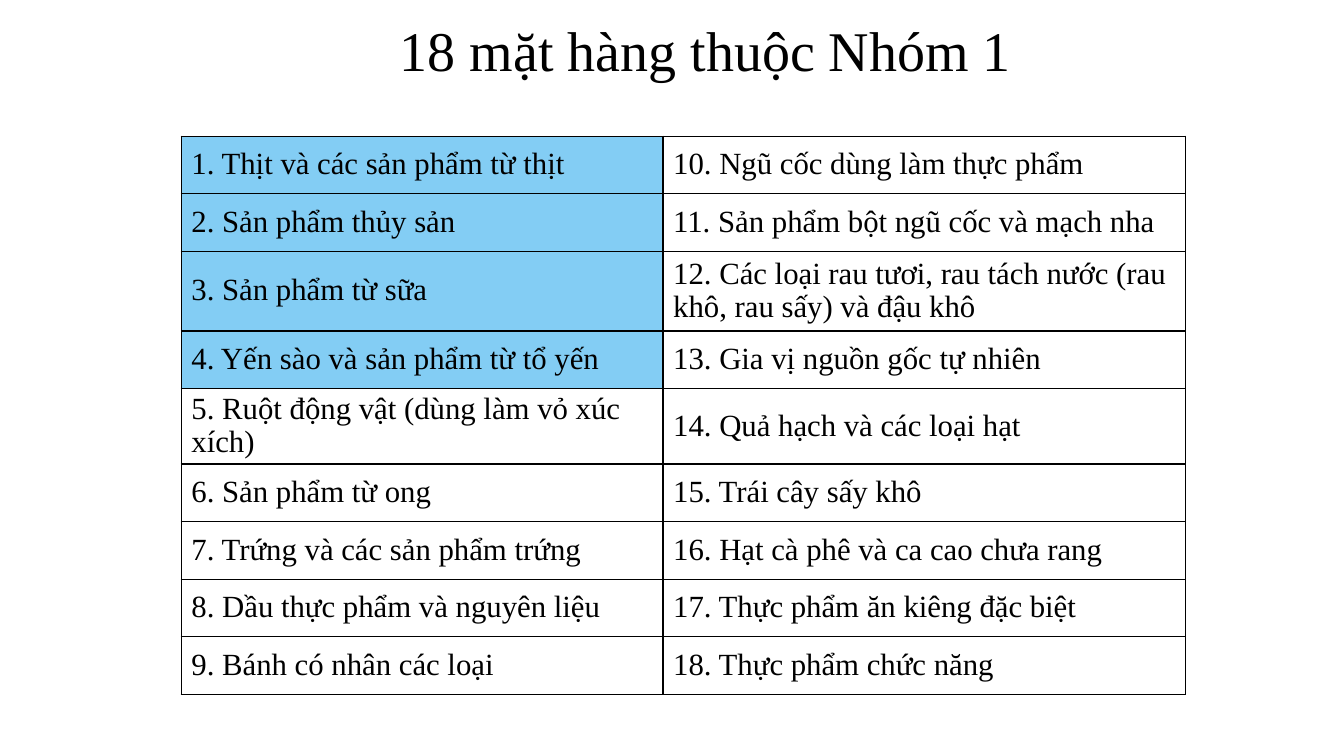
from pptx import Presentation
from pptx.dml.color import RGBColor
from pptx.enum.text import MSO_ANCHOR as Anchor, MSO_AUTO_SIZE as AutoSize, PP_ALIGN as Align
from pptx.oxml import parse_xml
from pptx.oxml.ns import nsdecls
from pptx.util import Cm, Pt

FONT = "Times New Roman"
BLACK, HIGHLIGHT = "000000", "83CDF4"
HIGHLIGHTED_ITEMS = 4
COLUMN_WIDTHS = [12.14, 13.16]
ROW_HEIGHTS = [1.45, 1.45, 2.01] + [1.45] * 6
ITEMS = [
    "Thịt và các sản phẩm từ thịt",
    "Sản phẩm thủy sản",
    "Sản phẩm từ sữa",
    "Yến sào và sản phẩm từ tổ yến",
    "Ruột động vật (dùng làm vỏ xúc xích)",
    "Sản phẩm từ ong",
    "Trứng và các sản phẩm trứng",
    "Dầu thực phẩm và nguyên liệu",
    "Bánh có nhân các loại",
    "Ngũ cốc dùng làm thực phẩm",
    "Sản phẩm bột ngũ cốc và mạch nha",
    "Các loại rau tươi, rau tách nước (rau khô, rau sấy) và đậu khô",
    "Gia vị nguồn gốc tự nhiên",
    "Quả hạch và các loại hạt",
    "Trái cây sấy khô",
    "Hạt cà phê và ca cao chưa rang",
    "Thực phẩm ăn kiêng đặc biệt",
    "Thực phẩm chức năng",
]


def color(hex_code):
    return RGBColor.from_string(hex_code)


def set_font(paragraph, size):
    paragraph.font.name = FONT
    paragraph.font.size = Pt(size)
    paragraph.font.color.rgb = color(BLACK)


def add_borders(cell):
    properties = cell._tc.get_or_add_tcPr()
    for side in ("lnL", "lnR", "lnT", "lnB"):
        properties.append(parse_xml(
            f'<a:{side} {nsdecls("a")} w="{Pt(1)}"><a:solidFill>'
            f'<a:srgbClr val="{BLACK}"/></a:solidFill></a:{side}>'))


def fill_cell(cell, number, item):
    add_borders(cell)
    if number <= HIGHLIGHTED_ITEMS:
        cell.fill.solid()
        cell.fill.fore_color.rgb = color(HIGHLIGHT)
    else:
        cell.fill.background()
    cell.vertical_anchor = Anchor.MIDDLE
    paragraph = cell.text_frame.paragraphs[0]
    paragraph.text = f"{number}. {item}"
    paragraph.line_spacing = 0.96
    set_font(paragraph, 22)


def place_title(slide, left, top, width, height):
    title = slide.shapes.title
    title.left, title.top, title.width, title.height = left, top, width, height
    frame = title.text_frame
    frame.text = "18 mặt hàng thuộc Nhóm 1"
    frame.word_wrap = True
    frame.auto_size = AutoSize.NONE
    frame.vertical_anchor = Anchor.MIDDLE
    frame.margin_left = frame.margin_right = Cm(0.33)
    frame.margin_top = frame.margin_bottom = Cm(0.33)
    paragraph = frame.paragraphs[0]
    paragraph.alignment = Align.LEFT
    paragraph.line_spacing = 0.9
    set_font(paragraph, 40)


def add_item_table(slide, left, top):
    """Number the items down the first column, then down the second."""
    row_count = len(ROW_HEIGHTS)
    table = slide.shapes.add_table(
        row_count, len(COLUMN_WIDTHS), left, top,
        Cm(sum(COLUMN_WIDTHS)), Cm(sum(ROW_HEIGHTS))).table
    table.first_row = table.horz_banding = False
    for column, width in zip(table.columns, COLUMN_WIDTHS):
        column.width = Cm(width)
    for row, height in zip(table.rows, ROW_HEIGHTS):
        row.height = Cm(height)
    for index, item in enumerate(ITEMS):
        column, row = divmod(index, row_count)
        fill_cell(table.cell(row, column), index + 1, item)


def main():
    presentation = Presentation()
    presentation.slide_width, presentation.slide_height = Cm(33.87), Cm(19.05)
    slide = presentation.slides.add_slide(presentation.slide_layouts[5])
    add_item_table(slide, Cm(4.57), Cm(3.43))
    place_title(slide, Cm(9.75), Cm(0), Cm(16.84), Cm(2.69))
    presentation.save("out.pptx")


if __name__ == "__main__":
    main()
